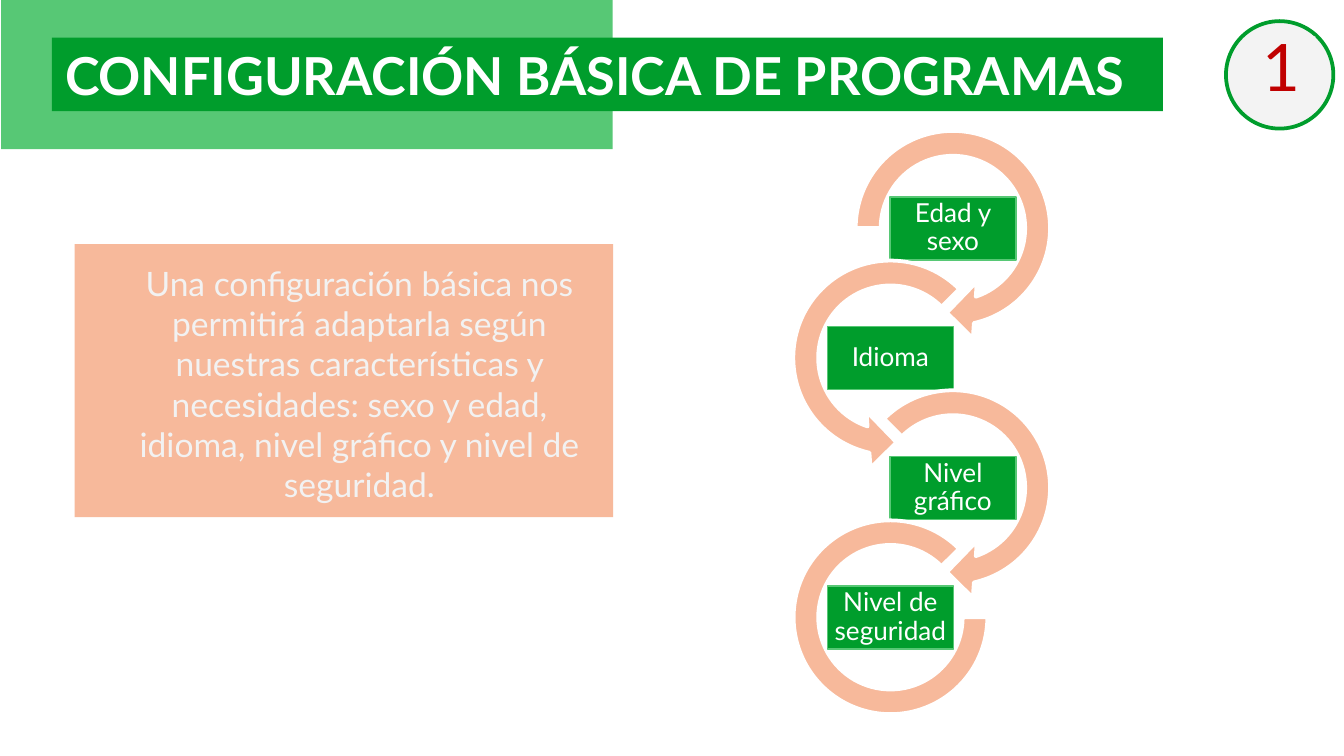
from pptx import Presentation
from pptx.dml.color import RGBColor
from pptx.enum.shapes import MSO_SHAPE
from pptx.enum.text import MSO_ANCHOR, PP_ALIGN
from pptx.util import Cm, Pt

GREEN, LIGHT_GREEN, SALMON, WHITE, GREY = "009D2C", "57C875", "F7B99B", "FFFFFF", "F3F3F3"


def paint(shape, fill, line=None, width=0.75):
    shape.shadow.inherit = False
    shape.fill.solid()
    shape.fill.fore_color.rgb = RGBColor.from_string(fill)
    if line:
        shape.line.color.rgb = RGBColor.from_string(line)
        shape.line.width = Pt(width)
    else:
        shape.line.fill.background()


def write(shape, text, size=14, color=WHITE, bold=False, align=PP_ALIGN.CENTER,
          anchor=MSO_ANCHOR.MIDDLE, inset=0.25, spacing=1.0):
    frame = shape.text_frame
    frame.word_wrap = True
    frame.vertical_anchor = anchor
    frame.margin_left = frame.margin_right = Cm(inset)
    frame.margin_top = frame.margin_bottom = Cm(inset)
    paragraph = frame.paragraphs[0]
    paragraph.text = text
    paragraph.alignment = align
    paragraph.line_spacing = spacing
    paragraph.font.name = "Lato"
    paragraph.font.size = Pt(size)
    paragraph.font.bold = bold
    paragraph.font.color.rgb = RGBColor.from_string(color)


presentation = Presentation()
presentation.slide_width, presentation.slide_height = Cm(25.4), Cm(14.28)
slide = presentation.slides.add_slide(presentation.slide_layouts[6])
shapes = slide.shapes

# Description panel, with its text set towards the right
panel = shapes.add_shape(MSO_SHAPE.RECTANGLE, Cm(1.41), Cm(4.61), Cm(10.18), Cm(5.16))
paint(panel, SALMON)
description = shapes.add_textbox(Cm(2.03), Cm(4.71), Cm(9.53), Cm(5.23))
write(description, "Una configuración básica nos permitirá adaptarla según nuestras "
      "características y necesidades: sexo y edad, idioma, nivel gráfico y nivel de "
      "seguridad.", size=18, color="F2F2F2", anchor=MSO_ANCHOR.TOP)

# Title banner
backdrop = shapes.add_shape(MSO_SHAPE.RECTANGLE, Cm(0.02), Cm(0), Cm(11.56), Cm(2.82))
paint(backdrop, LIGHT_GREEN)
banner = shapes.add_shape(MSO_SHAPE.RECTANGLE, Cm(0.98), Cm(0.71), Cm(21), Cm(1.39))
paint(banner, GREEN)
write(banner, "CONFIGURACIÓN BÁSICA DE PROGRAMAS", size=28, bold=True, align=PP_ALIGN.LEFT)

# Chain of circular arrows, alternating right and left, around the step boxes
steps = ["Edad y sexo", "Idioma", "Nivel gráfico", "Nivel de seguridad"]
for index, step in enumerate(steps):
    center_x = 16.83 if index % 2 else 18.01
    center_y = 4.31 + 2.45 * index

    if index == len(steps) - 1:
        kind, diameter = MSO_SHAPE.BLOCK_ARC, 3.66
        adjustments = [0, 189, 0.127]
    else:
        kind, diameter = MSO_SHAPE.CIRCULAR_ARROW, 4.27
        adjustments = [0.11, 11.42, 45, 135 if index else 108, 0.125]
    ring = shapes.add_shape(kind, Cm(center_x - diameter / 2), Cm(center_y - diameter / 2),
                            Cm(diameter), Cm(diameter))
    for position, value in enumerate(adjustments):
        ring.adjustments[position] = value
    if kind == MSO_SHAPE.CIRCULAR_ARROW and index % 2:
        ring.element.spPr.xfrm.set("flipH", "1")
    paint(ring, SALMON, line=WHITE, width=2)

    box = shapes.add_shape(MSO_SHAPE.RECTANGLE, Cm(center_x - 1.19), Cm(center_y - 0.59),
                           Cm(2.38), Cm(1.19))
    paint(box, GREEN, line=LIGHT_GREEN)
    write(box, step, inset=0.02, spacing=0.9)

# Numbered badge
badge = shapes.add_shape(MSO_SHAPE.OVAL, Cm(23.17), Cm(0.4), Cm(2.03), Cm(2.03))
paint(badge, GREY, line=GREEN, width=2)
number = shapes.add_shape(MSO_SHAPE.RECTANGLE, Cm(23.57), Cm(0.69), Cm(1.29), Cm(1.29))
paint(number, GREY)
write(number, "1", size=35, color="C00000", inset=0.05, spacing=0.9)

presentation.save("out.pptx")
